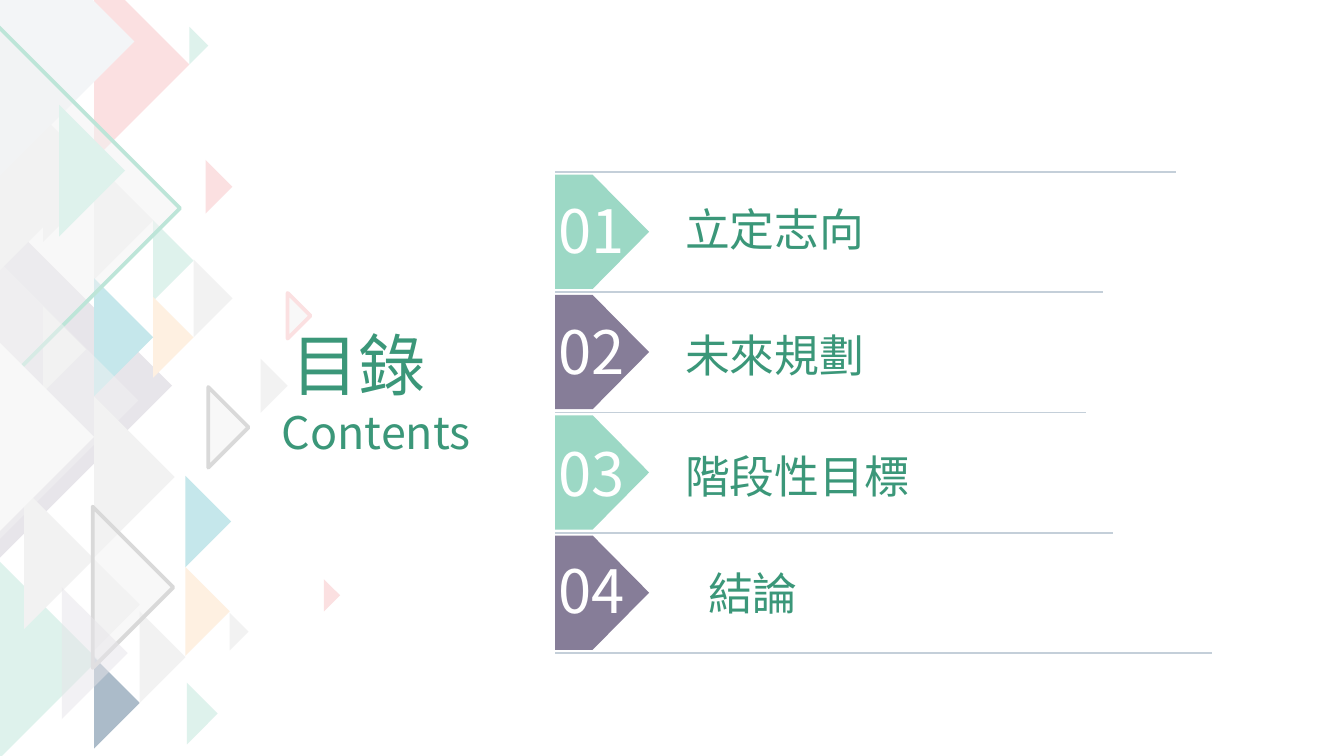
"""Build a contents slide with a triangle mosaic and four numbered topics."""
from typing import NamedTuple, Optional

from lxml import etree
from pptx import Presentation
from pptx import util as u
from pptx.dml.color import RGBColor
from pptx.enum import shapes, text
from pptx.oxml.ns import qn

FONT = "Noto Sans CJK SC"
GRAY, MINT, PINK, CREAM, SKY = "F2F2F2", "DEF2EC", "FBE0E1", "FEF0E1", "C5E7EB"
LILAC, SILVER, GREEN, WHITE = "E7E5EA", "D9D9D9", "3B9779", "FFFFFF"
AQUA, PURPLE, RULE = "9CD8C5", "867D98", "C4CFD9"
WIDTH = 10
HEIGHT = WIDTH * 9 / 16
LEFT, RULE_TOP, TAG_TOP, STEP = 4.13, 1.28, 1.3, 0.895
TAG_HEIGHT, TAG_SHOULDER, TAG_TIP = 0.85, 0.28, 0.7


class Triangle(NamedTuple):
    """A right-pointing triangle: left edge, middle height, half its height."""
    x: float
    y: float
    half: float
    fill: str
    line: Optional[str] = None
    clear: bool = False


class Topic(NamedTuple):
    """A numbered topic with the end of the rule above it."""
    title: str
    color: str
    rule_end: float
    number_top: float
    x: float
    y: float
    width: float


TRIANGLES = [
    Triangle(0, 2.87, 1.28, LILAC),
    Triangle(0, 1.28, 0.73, GRAY),
    Triangle(0.7, 1.64, 0.44, GRAY),
    Triangle(0.7, 0.48, 0.71, PINK),
    Triangle(1.14, 1.94, 0.3, MINT),
    Triangle(1.14, 2.51, 0.3, CREAM),
    Triangle(0.7, 2.51, 0.44, SKY),
    Triangle(0.7, 3.55, 0.6, GRAY),
    Triangle(0.7, 4.5, 0.34, GRAY),
    Triangle(0, 4.91, 0.73, MINT),
    Triangle(0.7, 5.23, 0.34, "ABBBC9"),
    Triangle(1.04, 4.89, 0.34, GRAY),
    Triangle(1.38, 4.55, 0.33, CREAM),
    Triangle(1.38, 3.88, 0.34, SKY),
    Triangle(0, 3.36, 0.51, GRAY),
    Triangle(0, 0.31, 1, "F3F5F7"),
    Triangle(0.32, 1.48, 0.32, GRAY),
    Triangle(0.32, 2.6, 0.32, GRAY),
    Triangle(0.18, 4.16, 0.52, GRAY),
    Triangle(1.53, 1.39, 0.2, PINK),
    Triangle(-0.06, 1.55, 1.4, GRAY, "BDE5D8", True),
    Triangle(-0.06, 3.25, 0.76, WHITE),
    Triangle(0.69, 4.37, 0.6, GRAY, SILVER, True),
    Triangle(1.55, 3.18, 0.3, GRAY, SILVER, True),
    Triangle(2.14, 2.35, 0.17, GRAY, PINK, True),
    Triangle(1.94, 2.87, 0.2, GRAY),
    Triangle(1.71, 4.7, 0.14, GRAY),
    Triangle(1.39, 5.31, 0.23, MINT),
    Triangle(0, 2.98, 1.03, GRAY, clear=True),
    Triangle(0.46, 4.86, 0.49, LILAC, clear=True),
    Triangle(0.44, 1.27, 0.49, MINT),
    Triangle(1.44, 2.22, 0.29, GRAY),
    Triangle(1.41, 0.34, 0.14, MINT),
    Triangle(2.41, 4.43, 0.12, PINK),
]
TOPICS = [
    Topic("立定志向", AQUA, 8.75, 1.39, 5, 1.45, 1.97),
    Topic("未來規劃", PURPLE, 8.21, 2.29, 5, 2.39, 1.97),
    Topic("階段性目標", AQUA, 8.08, 3.2, 5, 3.29, 1.97),
    Topic("結論", PURPLE, 8.28, 4.07, 5.17, 4.16, 1.57),
]
LAST_RULE_END = 9.02


def paint(fmt, color: str) -> None:
    """Give a fill a solid hex colour, or set a font colour."""
    if hasattr(fmt, "solid"):
        fmt.solid()
        fmt = fmt.fore_color
    fmt.rgb = RGBColor.from_string(color)


def add_outline(s, points: list, fill: str):
    """Draw a closed, filled outline through points given in inches."""
    pts = [(u.Inches(x), u.Inches(y)) for x, y in points]
    fb = s.shapes.build_freeform(*pts[0])
    fb.add_line_segments(pts[1:], close=True)
    sp = fb.convert_to_shape()
    sp.shadow.inherit = False
    paint(sp.fill, fill)
    sp.line.fill.background()
    return sp


def add_triangle(s, t: Triangle) -> None:
    """Draw one triangle of the mosaic."""
    points = [(t.x + t.half, t.y), (t.x, t.y + t.half), (t.x, t.y - t.half)]
    sp = add_outline(s, points, t.fill)
    if t.clear:
        clr = sp._element.spPr.find(qn("a:solidFill")).find(qn("a:srgbClr"))
        etree.SubElement(clr, qn("a:alpha"), val="50000")
    if t.line:
        paint(sp.line.fill, t.line)
        sp.line.width = u.Pt(2)


def add_rule(s, index: int, end: float) -> None:
    """Draw the horizontal rule above the topic with this index."""
    y = u.Inches(RULE_TOP + index * STEP)
    cxn = s.shapes.add_connector(shapes.MSO_CONNECTOR.STRAIGHT,
                                 u.Inches(LEFT), y, u.Inches(end), y)
    paint(cxn.line.fill, RULE)
    cxn.line.width = u.Pt(1)
    etree.SubElement(cxn._element.spPr, qn("a:effectLst"))


def add_text(s, box: tuple, lines: list, color: str, wrap: bool = True) -> None:
    """Add a text box whose lines are (text, size, alignment)."""
    tf = s.shapes.add_textbox(*map(u.Inches, box)).text_frame
    tf.word_wrap = wrap
    tf.auto_size = text.MSO_AUTO_SIZE.SHAPE_TO_FIT_TEXT
    for i, (words, size, align) in enumerate(lines):
        p = tf.add_paragraph() if i else tf.paragraphs[0]
        p.text, p.alignment = words, align
        p.font.size, p.font.name = u.Pt(size), FONT
        paint(p.font.color, color)
        props = p._p.pPr.find(qn("a:defRPr"))
        etree.SubElement(props, qn("a:ea"), typeface=FONT)


def add_tag(s, index: int, topic: Topic) -> None:
    """Draw the arrow-shaped tag with the number of a topic."""
    top = TAG_TOP + index * STEP
    shoulder, bottom = LEFT + TAG_SHOULDER, top + TAG_HEIGHT
    add_outline(s, [(LEFT, top), (shoulder, top),
                    (LEFT + TAG_TIP, top + TAG_HEIGHT / 2),
                    (shoulder, bottom), (LEFT, bottom)], topic.color)
    add_text(s, (4.06, topic.number_top, 0.73, 0.64),
             [(f"{index + 1:02}", 32, text.PP_ALIGN.LEFT)], WHITE, wrap=False)


def main() -> None:
    """Build and save the slide."""
    prs = Presentation()
    prs.slide_width, prs.slide_height = u.Inches(WIDTH), u.Inches(HEIGHT)
    s = prs.slides.add_slide(prs.slide_layouts[6])
    for triangle in TRIANGLES:
        add_triangle(s, triangle)
    for i, end in enumerate([t.rule_end for t in TOPICS] + [LAST_RULE_END]):
        add_rule(s, i, end)
    for i, topic in enumerate(TOPICS):
        add_tag(s, i, topic)
    add_text(s, (1.74, 2.36, 1.86, 1.11),
             [("目錄", 36, text.PP_ALIGN.CENTER),
              ("Contents", 24, text.PP_ALIGN.RIGHT)], GREEN)
    for t in TOPICS:
        add_text(s, (t.x, t.y, t.width, 0.5),
                 [(t.title, 24, text.PP_ALIGN.JUSTIFY)], GREEN)
    prs.save("out.pptx")


if __name__ == "__main__":
    main()
